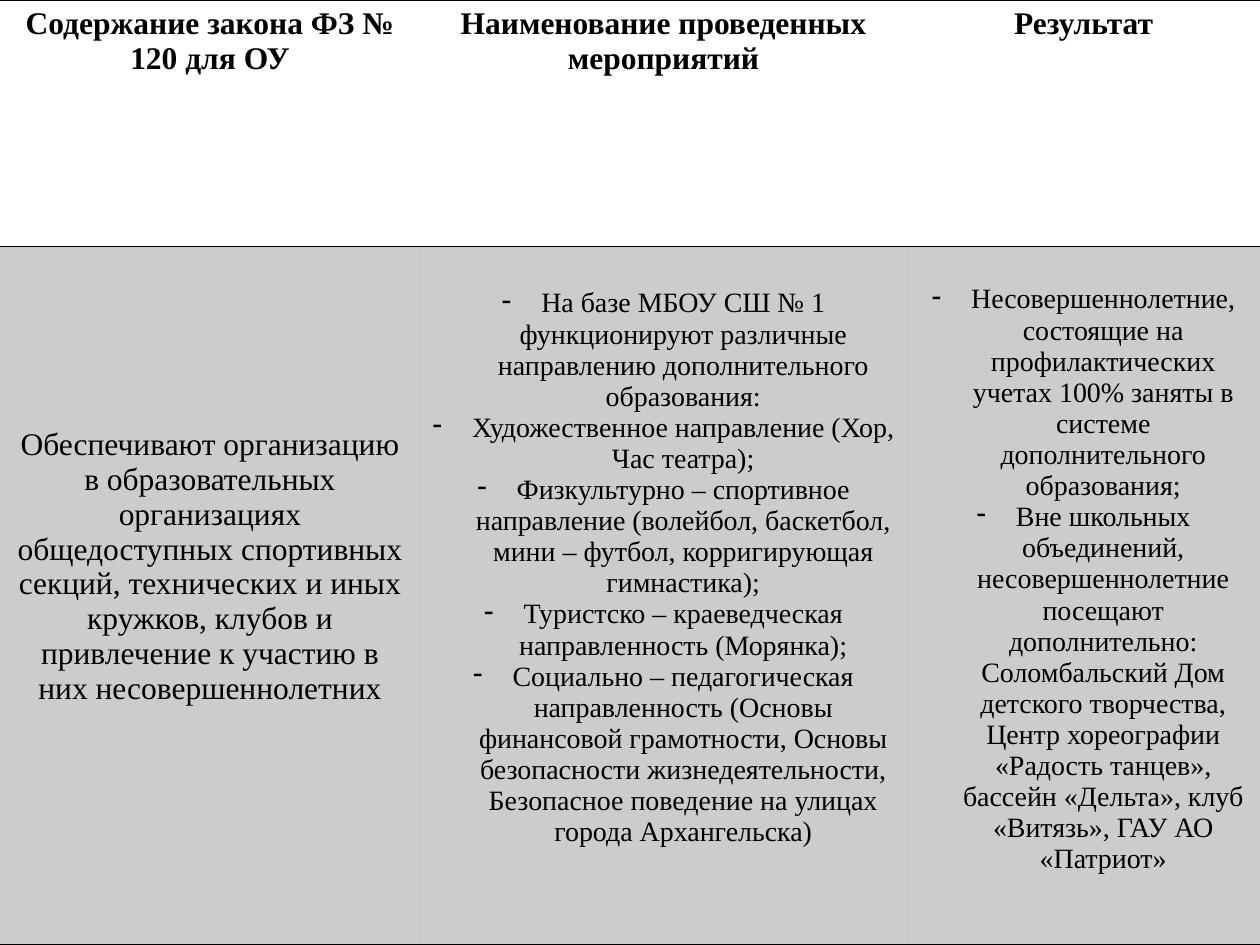
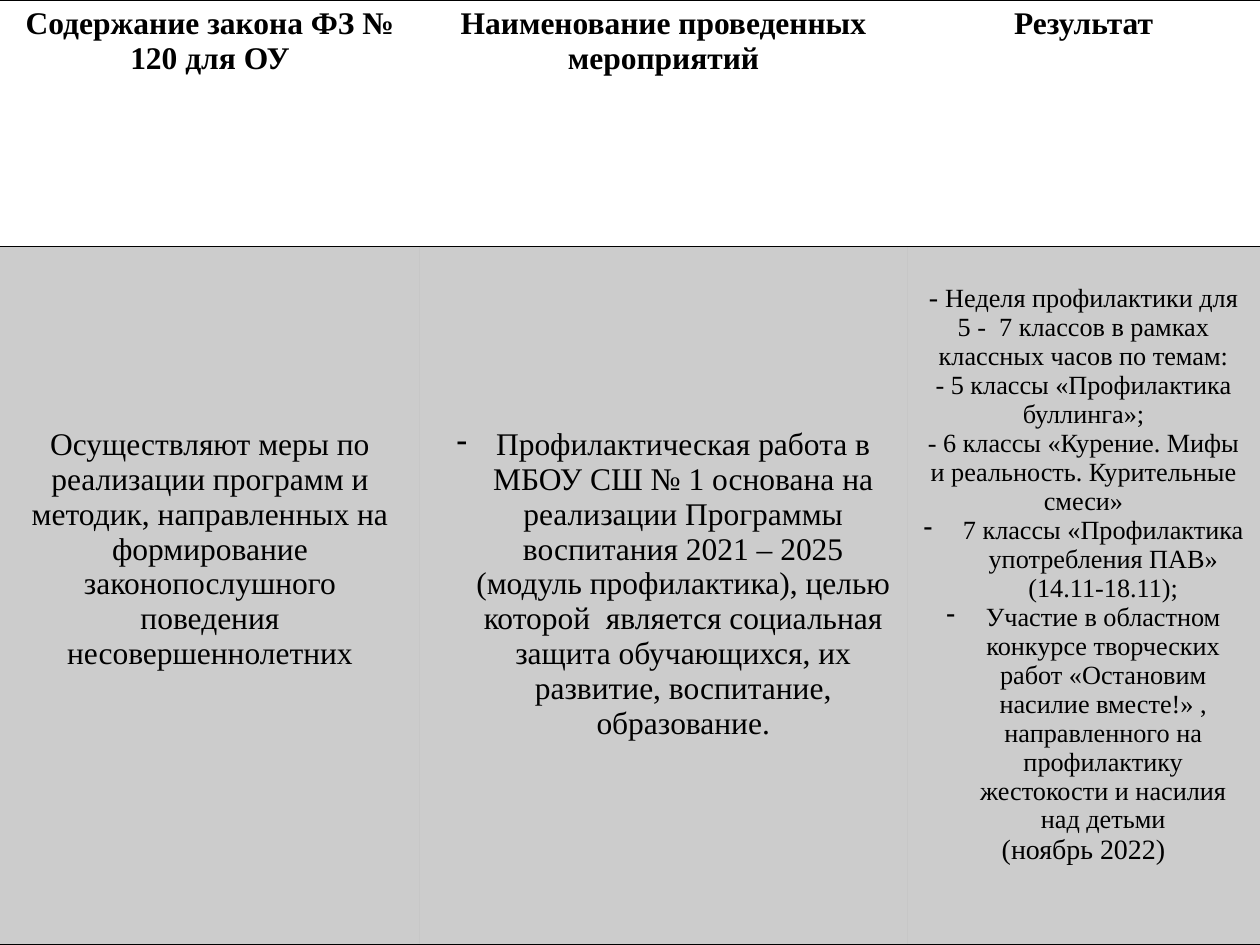
from lxml.etree import SubElement as Sub
from pptx import Presentation
from pptx.dml.color import RGBColor as Rgb
from pptx.enum.text import PP_ALIGN as Align
from pptx.oxml.ns import qn
from pptx.util import Pt

HUES = {"ink": "000000"}
FONT = "Times New Roman"
COLS = (240, 278.4, 201.6)
ROWS = (141, 399)
HEADS = (
    "Содержание закона ФЗ № 120 для ОУ",
    "Наименование проведенных мероприятий",
    "Результат",
)
INSET = 3.6
PITCH = 1.107
INDENT = 22.5


def add_run(par, text, size, bold=False):
    run = par.add_run()
    run.text = text
    font = run.font
    font.name, font.size, font.bold = FONT, Pt(size), bold
    font.color.rgb = Rgb.from_string(HUES["ink"])


def write(par, text, size=16, bold=False, dash=False, lead=""):
    par.alignment = Align.CENTER
    if dash:
        props = par._p.get_or_add_pPr()
        props.set("marL", str(Pt(INDENT)))
        props.set("indent", str(-Pt(INDENT)))
        Sub(props, qn("a:buChar"), char="-")
    if lead:
        add_run(par, lead, 16)
    add_run(par, text, size, bold)


class Deck:
    def __init__(self):
        self.show = Presentation()
        self.show.slide_width, self.show.slide_height = Pt(720), Pt(540)
        self.slide = None

    def page(self):
        self.slide = self.show.slides.add_slide(self.show.slide_layouts[6])

    def edge(self, cell, sides):
        props = cell._tc.get_or_add_tcPr()
        for side in "LRTB":
            line = Sub(props, qn("a:ln" + side), w=str(Pt(1)))
            if side in sides:
                fill = Sub(line, qn("a:solidFill"))
                Sub(fill, qn("a:srgbClr"), val=HUES["ink"])
            else:
                Sub(line, qn("a:noFill"))

    def tint(self, cell, share):
        cell.fill.solid()
        cell.fill.fore_color.rgb = Rgb.from_string(HUES["ink"])
        hue = cell._tc.tcPr.find(".//" + qn("a:solidFill") + "[last()]/" + qn("a:srgbClr"))
        for fill in cell._tc.tcPr.findall(qn("a:solidFill")):
            hue = fill.find(qn("a:srgbClr"))
        Sub(hue, qn("a:alpha"), val=str(share * 1000))

    def fill_cell(self, cell, paras, drop=0):
        cell.margin_top = Pt(round(INSET + drop * PITCH, 2))
        frame = cell.text_frame
        for i, (text, form) in enumerate(paras):
            par = frame.add_paragraph() if i else frame.paragraphs[0]
            write(par, text, **form)

    def table(self, body):
        grid = self.slide.shapes.add_table(2, 3, 0, 0, Pt(sum(COLS)), Pt(sum(ROWS))).table
        grid.first_row = grid.horz_banding = False
        for col, width in zip(grid.columns, COLS):
            col.width = Pt(width)
        for row, height in zip(grid.rows, ROWS):
            row.height = Pt(height)
        for i, (head, (drop, paras)) in enumerate(zip(HEADS, body)):
            top, low = grid.cell(0, i), grid.cell(1, i)
            self.edge(top, "TB")
            top.fill.background()
            self.fill_cell(top, [(head, dict(size=18, bold=True))])
            self.edge(low, "TB")
            self.tint(low, 20)
            self.fill_cell(low, paras, drop)


BIG = dict(size=18)
ITEM = dict(dash=True)
SMALL = dict(size=15)

PAGES = [
    [
        (5 * 18, [
            ("Обеспечивают организацию в образовательных организациях общедоступных "
             "спортивных секций, технических и иных кружков, клубов и привлечение "
             "к участию в них несовершеннолетних", BIG),
        ]),
        (18, [
            ("На базе МБОУ СШ № 1 функционируют различные направлению "
             "дополнительного образования:", ITEM),
            ("Художественное направление (Хор, Час театра);", ITEM),
            ("Физкультурно – спортивное направление (волейбол, баскетбол, "
             "мини – футбол, корригирующая гимнастика);", ITEM),
            ("Туристско – краеведческая направленность (Морянка);", ITEM),
            ("Социально – педагогическая направленность (Основы финансовой "
             "грамотности, Основы безопасности жизнедеятельности, Безопасное "
             "поведение на улицах города Архангельска)", ITEM),
        ]),
        (16, [
            ("Несовершеннолетние, состоящие на профилактических учетах 100% "
             "заняты в системе дополнительного образования;", ITEM),
            ("Вне школьных объединений, несовершеннолетние посещают "
             "дополнительно: Соломбальский Дом детского творчества, Центр "
             "хореографии «Радость танцев», бассейн «Дельта», клуб «Витязь», "
             "ГАУ АО «Патриот»", ITEM),
        ]),
    ],
    [
        (5 * 18, [
            ("Осуществляют меры по реализации программ и методик, направленных "
             "на формирование законопослушного поведения несовершеннолетних", BIG),
        ]),
        (5 * 18, [
            ("Профилактическая работа в МБОУ СШ № 1 основана на реализации "
             "Программы воспитания 2021 – 2025 (модуль профилактика), целью "
             "которой  является социальная защита обучающихся, их развитие, "
             "воспитание, образование.", BIG | ITEM),
        ]),
        (15, [
            ("Неделя профилактики для 5 -  7 классов в рамках классных часов "
             "по темам:", SMALL | dict(lead="- ")),
            ("- 5 классы «Профилактика буллинга»;", SMALL),
            ("- 6 классы «Курение. Мифы и реальность. Курительные смеси»", SMALL),
            ("7 классы «Профилактика употребления ПАВ» (14.11-18.11);", SMALL | ITEM),
            ("Участие в областном конкурсе творческих работ «Остановим насилие "
             "вместе!» , направленного на профилактику жестокости и насилия "
             "над детьми", SMALL | ITEM),
            ("(ноябрь 2022)", {}),
        ]),
    ],
]


def main():
    deck = Deck()
    for body in PAGES:
        deck.page()
        deck.table(body)
    deck.show.save("out.pptx")


if __name__ == "__main__":
    main()
